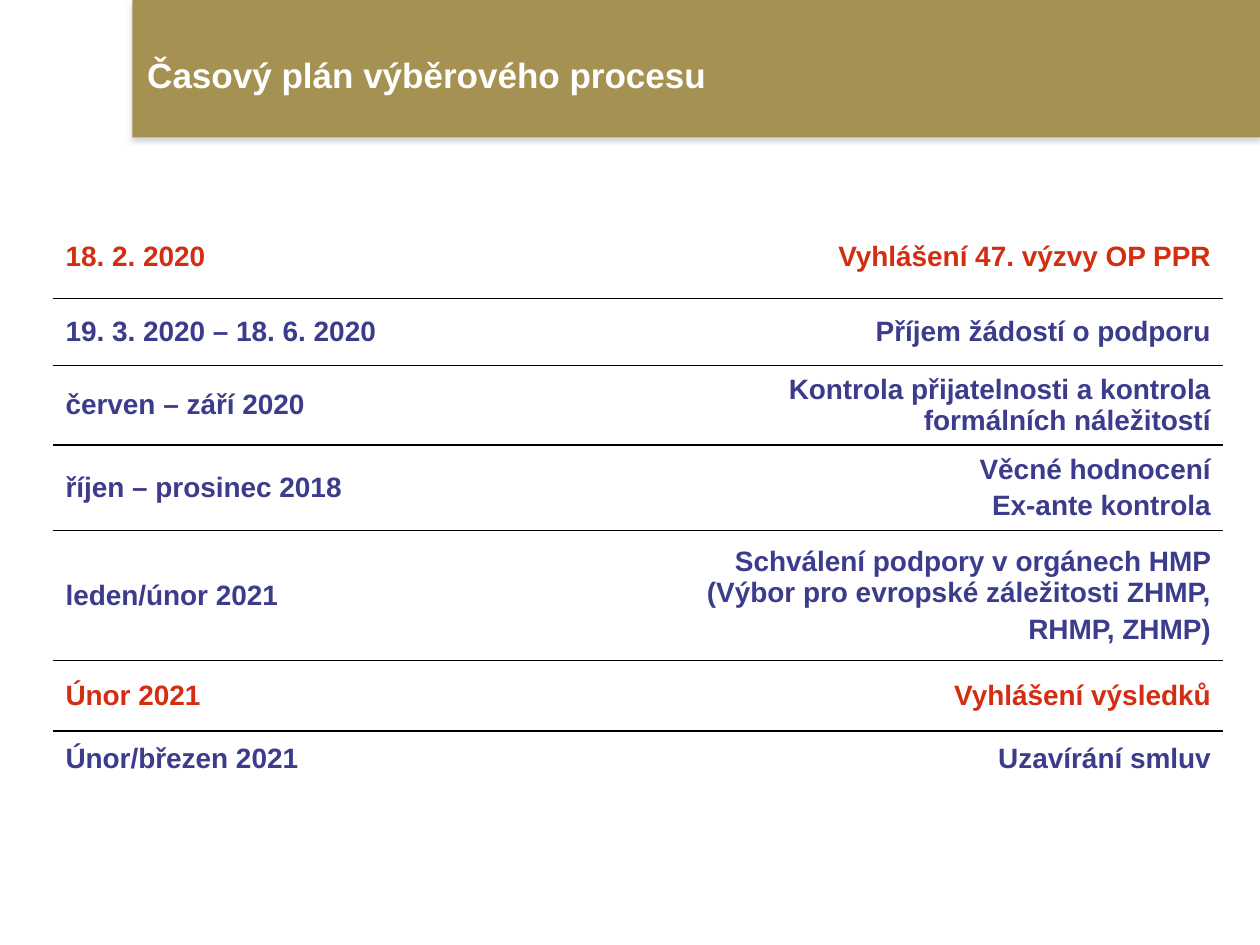
from dataclasses import dataclass

from lxml.etree import SubElement
from pptx import Presentation
from pptx.dml.color import RGBColor
from pptx.enum.shapes import MSO_SHAPE
from pptx.enum.text import MSO_ANCHOR, PP_ALIGN
from pptx.oxml.ns import qn
from pptx.util import Inches, Pt


@dataclass(frozen=True)
class Theme:
    """Colours and type of the slide."""
    font: str = "Arial"
    title_size: int = 20
    table_size: int = 16
    band: str = "A59253"
    title: str = "FFFFFF"
    text: str = "3C3C8C"
    highlight: str = "D42E12"
    rule: str = "000000"
    shadow: str = "808080"


THEME = Theme()

SCHEDULE = [
    (0.66, THEME.highlight, "18. 2. 2020", ["Vyhlášení 47. výzvy OP PPR"]),
    (0.53, THEME.text, "19. 3. 2020 – 18. 6. 2020", ["Příjem žádostí o podporu"]),
    (0.56, THEME.text, "červen – září 2020",
     ["Kontrola přijatelnosti a kontrola formálních náležitostí"]),
    (0.54, THEME.text, "říjen – prosinec 2018", ["Věcné hodnocení", "Ex-ante kontrola"]),
    (1.03, THEME.text, "leden/únor 2021",
     ["Schválení podpory v orgánech HMP (Výbor pro evropské záležitosti ZHMP,",
      "RHMP, ZHMP)"]),
    (0.56, THEME.highlight, "Únor 2021", ["Vyhlášení výsledků"]),
    (0.45, THEME.text, "Únor/březen 2021", ["Uzavírání smluv"]),
]


def write_lines(frame, lines, size, color, align=PP_ALIGN.LEFT):
    """Fill a text frame with bold paragraphs."""
    for index, line in enumerate(lines):
        paragraph = frame.add_paragraph() if index else frame.paragraphs[0]
        paragraph.text = line
        paragraph.alignment = align
        if index:
            paragraph.space_before = Pt(0.2 * size)
        font = paragraph.font
        font.name, font.size, font.bold = THEME.font, Pt(size), True
        font.color.rgb = RGBColor.from_string(color)


def add_band(slide):
    """Add the header band with its soft shadow."""
    band = slide.shapes.add_shape(
        MSO_SHAPE.RECTANGLE, Inches(1.05), 0, Inches(8.95), Inches(1.09))
    band.fill.solid()
    band.fill.fore_color.rgb = RGBColor.from_string(THEME.band)
    band.line.fill.background()
    band.shadow.inherit = False
    effects = band._element.spPr.find(qn("a:effectLst"))
    shadow = SubElement(effects, qn("a:outerShdw"), blurRad=str(Pt(3.1)),
                        dist=str(Pt(1.8)), dir="5400000", rotWithShape="0")
    color = SubElement(shadow, qn("a:srgbClr"), val=THEME.shadow)
    SubElement(color, qn("a:alpha"), val="35000")


def add_title(slide, text):
    """Add the slide title over the band."""
    box = slide.shapes.add_textbox(
        Inches(1.07), Inches(-0.11), Inches(8.62), Inches(1.45))
    frame = box.text_frame
    frame.word_wrap = True
    frame.vertical_anchor = MSO_ANCHOR.MIDDLE
    write_lines(frame, [text], THEME.title_size, THEME.title)
    frame.paragraphs[0].line_spacing = 0.9


def set_borders(cell, ruled_sides):
    """Rule the named sides of a cell and clear the others."""
    properties = cell._tc.get_or_add_tcPr()
    for side in "LRTB":
        line = SubElement(properties, qn(f"a:ln{side}"), w=str(Pt(1)))
        if side in ruled_sides:
            fill = SubElement(line, qn("a:solidFill"))
            SubElement(fill, qn("a:srgbClr"), val=THEME.rule)
        else:
            SubElement(line, qn("a:noFill"))


def add_schedule(slide, schedule):
    """Add the table of dates and steps with rules between the rows."""
    total = sum(height for height, *_ in schedule)
    table = slide.shapes.add_table(
        len(schedule), 2, Inches(0.42), Inches(1.71), Inches(9.29), Inches(total)).table
    table.first_row = table.horz_banding = False
    for column, width in zip(table.columns, (4.58, 4.71)):
        column.width = Inches(width)
    last = len(schedule) - 1
    for index, (height, color, date, steps) in enumerate(schedule):
        row = table.rows[index]
        row.height = Inches(height)
        sides = ("T" if index > 0 else "") + ("B" if index < last else "")
        contents = (([date], PP_ALIGN.LEFT), (steps, PP_ALIGN.RIGHT))
        for cell, (lines, align) in zip(row.cells, contents):
            set_borders(cell, sides)
            cell.fill.background()
            cell.vertical_anchor = MSO_ANCHOR.MIDDLE
            write_lines(cell.text_frame, lines, THEME.table_size, color, align)


def main():
    """Build and save the deck."""
    deck = Presentation()
    deck.slide_width, deck.slide_height = Inches(10), Inches(7.5)
    slide = deck.slides.add_slide(deck.slide_layouts[6])
    add_band(slide)
    add_title(slide, "Časový plán výběrového procesu")
    add_schedule(slide, SCHEDULE)
    deck.save("out.pptx")


if __name__ == "__main__":
    main()
